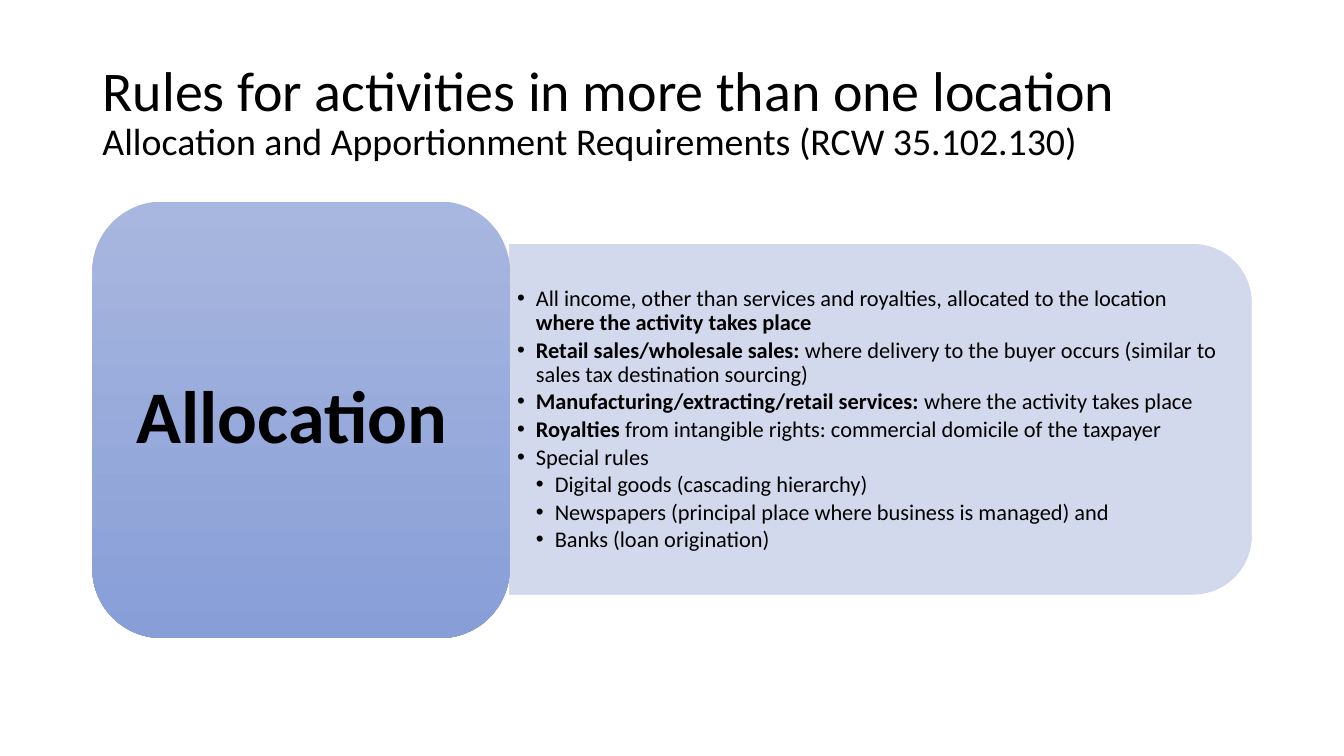
from dataclasses import dataclass

from lxml import etree
from pptx import Presentation
from pptx.dml.color import RGBColor
from pptx.enum import shapes, text
from pptx.oxml.ns import qn
from pptx.util import Pt


@dataclass(frozen=True)
class Theme:
    font: str = "Calibri"
    ink: RGBColor = RGBColor(0, 0, 0)
    panel: RGBColor = RGBColor(0xCF, 0xD5, 0xEA)
    card_top: RGBColor = RGBColor(0xA8, 0xB7, 0xDF)
    card_bottom: RGBColor = RGBColor(0x88, 0x9E, 0xD7)
    title_size: float = 40
    subtitle_size: float = 27
    card_size: float = 53
    rule_size: float = 16


@dataclass(frozen=True)
class Span:
    wording: str
    bold: bool = False


@dataclass(frozen=True)
class Rule:
    spans: tuple[Span, ...]
    level: int = 1


THEME = Theme()
INDENT = 13.5
PANEL_OPACITY = 90

RULES = (
    Rule((Span("All income, other than services and royalties, allocated to the location "),
          Span("where the activity takes place", True))),
    Rule((Span("Retail sales/wholesale sales: ", True),
          Span("where delivery to the buyer occurs (similar to sales tax destination sourcing)"))),
    Rule((Span("Manufacturing/extracting/retail services: ", True),
          Span("where the activity takes place"))),
    Rule((Span("Royalties", True),
          Span(" from intangible rights: commercial domicile of the taxpayer"))),
    Rule((Span("Special rules"),)),
    Rule((Span("Digital goods (cascading hierarchy)"),), 2),
    Rule((Span("Newspapers (principal place where business is managed) and"),), 2),
    Rule((Span("Banks (loan origination)"),), 2),
)


def apply(target, formats: dict) -> None:
    """Set each named attribute of the target."""
    for name, value in formats.items():
        setattr(target, name, value)


def format_frame(frame, left: float, top: float, right: float, bottom: float) -> None:
    apply(frame, {
        "word_wrap": True, "auto_size": text.MSO_AUTO_SIZE.NONE,
        "vertical_anchor": text.MSO_ANCHOR.MIDDLE,
        "margin_left": Pt(left), "margin_top": Pt(top),
        "margin_right": Pt(right), "margin_bottom": Pt(bottom),
    })


def add_run(paragraph, wording: str, size: float, bold: bool = False) -> None:
    run = paragraph.add_run()
    run.text = wording
    apply(run.font, {"name": THEME.font, "size": Pt(size), "bold": bold})
    run.font.color.rgb = THEME.ink


def set_opacity(fill_parent, percent: int) -> None:
    for colour in fill_parent.iter(qn("a:srgbClr")):
        etree.SubElement(colour, qn("a:alpha")).set("val", str(percent * 1000))


def add_bullet(paragraph, level: int) -> None:
    properties = paragraph._p.get_or_add_pPr()
    properties.set("marL", str(Pt(INDENT * level)))
    properties.set("indent", str(-Pt(INDENT)))
    etree.SubElement(properties, qn("a:buFont")).set("typeface", "Arial")
    etree.SubElement(properties, qn("a:buChar")).set("char", "•")


def write_title(slide) -> None:
    title = slide.shapes.title
    apply(title, {"left": Pt(66), "top": Pt(28.8), "width": Pt(828), "height": Pt(104.4)})
    format_frame(title.text_frame, 7.2, 3.6, 7.2, 3.6)
    heading = title.text_frame.paragraphs[0]
    apply(heading, {"alignment": text.PP_ALIGN.LEFT, "line_spacing": 0.9})
    add_run(heading, "Rules for activities in more than one location", THEME.title_size)
    heading.add_line_break()
    add_run(heading, "Allocation and Apportionment Requirements (RCW 35.102.130)",
            THEME.subtitle_size)


def add_rules_panel(slide) -> None:
    panel = slide.shapes.add_shape(shapes.MSO_SHAPE.ROUND_2_SAME_RECTANGLE,
                                   Pt(504), Pt(34.6), Pt(249.8), Pt(529.9))
    panel.rotation = 90
    panel.shadow.inherit = False
    panel.fill.solid()
    panel.fill.fore_color.rgb = THEME.panel
    panel.line.color.rgb = THEME.panel
    panel.line.width = Pt(0.5)
    set_opacity(panel._element.spPr, PANEL_OPACITY)


def add_rules(slide) -> None:
    frame = slide.shapes.add_textbox(Pt(364.3), Pt(187.2), Pt(517.7), Pt(225.4)).text_frame
    format_frame(frame, 5, 2.2, 5, 2.2)
    for number, rule in enumerate(RULES):
        paragraph = frame.add_paragraph() if number else frame.paragraphs[0]
        add_bullet(paragraph, rule.level)
        apply(paragraph, {"level": rule.level, "line_spacing": 0.9, "space_after": Pt(2.4)})
        for span in rule.spans:
            add_run(paragraph, span.wording, THEME.rule_size, span.bold)


def add_allocation_card(slide) -> None:
    card = slide.shapes.add_shape(shapes.MSO_SHAPE.ROUNDED_RECTANGLE,
                                  Pt(66), Pt(144), Pt(298.1), Pt(311.8))
    card.shadow.inherit = False
    card.line.fill.background()
    card.fill.gradient()
    card.fill.gradient_angle = 270
    for stop, position, colour in zip(card.fill.gradient_stops, (0, 1),
                                      (THEME.card_top, THEME.card_bottom)):
        stop.position = position
        stop.color.rgb = colour
    format_frame(card.text_frame, 4, 8, 17, 8)
    label = card.text_frame.paragraphs[0]
    apply(label, {"alignment": text.PP_ALIGN.CENTER, "line_spacing": 0.9})
    add_run(label, "Allocation", THEME.card_size, True)


def main() -> None:
    deck = Presentation()
    apply(deck, {"slide_width": Pt(960), "slide_height": Pt(540)})
    slide = deck.slides.add_slide(deck.slide_layouts.get_by_name("Title Only"))
    write_title(slide)
    add_rules_panel(slide)
    add_rules(slide)
    add_allocation_card(slide)
    deck.save("out.pptx")


if __name__ == "__main__":
    main()
